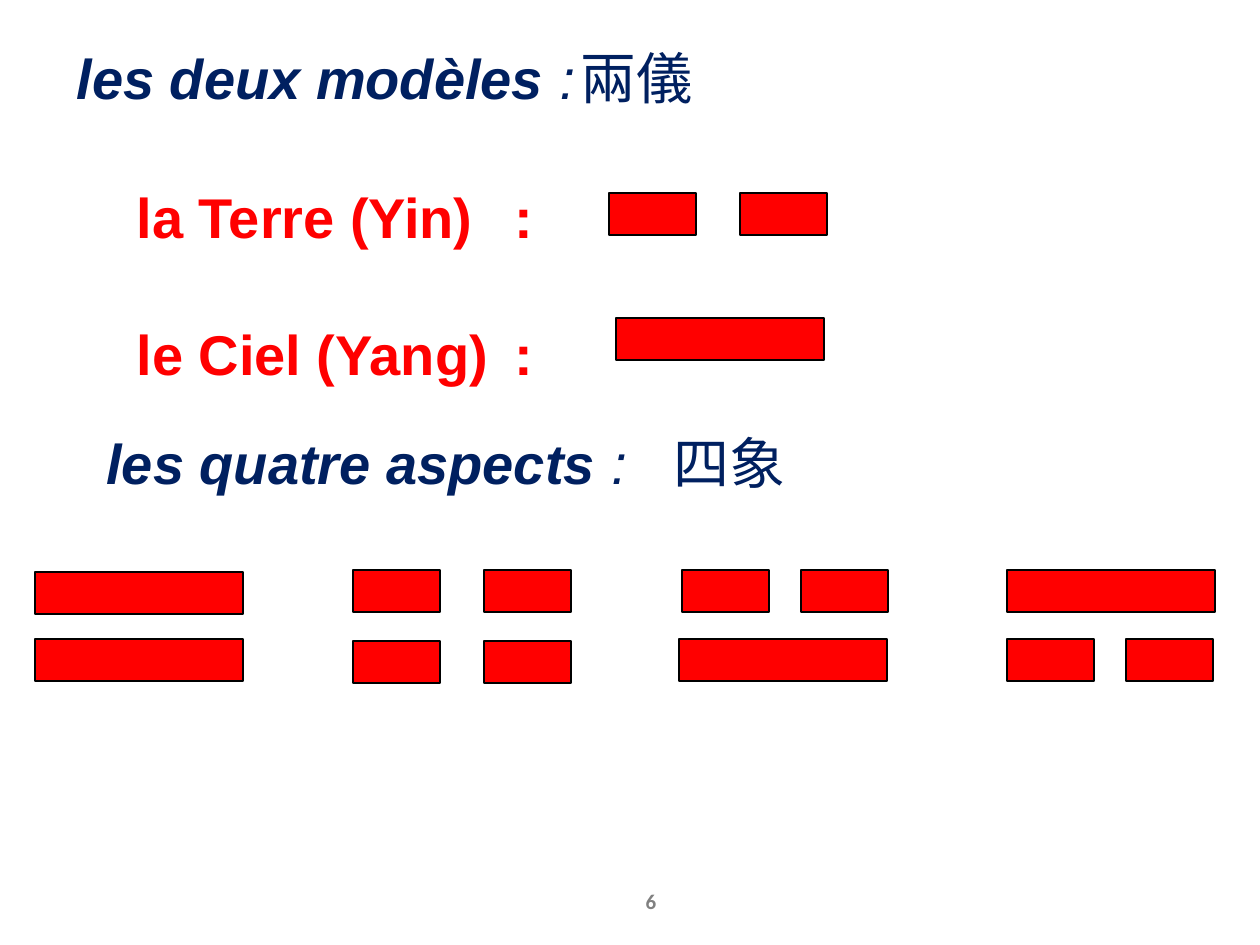
import pptx
import pptx.dml.color
import pptx.enum.shapes
import pptx.enum.text
import pptx.oxml.ns
import pptx.util
from lxml import etree

ALIGN = pptx.enum.text.PP_ALIGN
ANCHOR = pptx.enum.text.MSO_ANCHOR
SCALE = 914400 / 126  # EMU in one px

THEME = {
    "navy": "002060", "red": "FF0000", "black": "000000", "grey": "808080",
    "font": "Arial", "small_font": "Calibri", "size": 32, "small": 12, "line": 1.5,
}

# Content: each paragraph is a list of (text, bold, italic) runs
MODELS = [[("les deux modèles ", True, True), (":", False, True), ("\t兩儀", False, False)]]
ASPECTS = [[("les quatre aspects ", True, True), (":", False, True), ("\t四象", False, False)]]
PAIR = [[("la Terre (Yin)\t:", True, False)], [("le Ciel (Yang)\t:", True, False)]]
NUMBER = [[("6", True, False)]]

# Figures: rows of (left, top, step); step 0 is a whole bar, else a broken one
FIGURES = [
    [(609, 193, 131), (616, 318, 0)],
    [(35, 572, 0), (35, 639, 0)],
    [(353, 570, 131), (353, 641, 131)],
    [(682, 570, 119), (679, 639, 0)],
    [(1007, 570, 0), (1007, 639, 119)],
]
LONG, SHORT, HIGH = 208, 87, 42


def px(*values):
    return [pptx.util.Emu(round(v * SCALE)) for v in values]


def color(name):
    return pptx.dml.color.RGBColor.from_string(THEME[name])


def write(shape, text, box, ink="navy", font="font", size="size",
          align=ALIGN.LEFT, anchor=ANCHOR.TOP, gap=0, tab=None):
    shape.left, shape.top, shape.width, shape.height = px(*box)
    frame = shape.text_frame
    frame.word_wrap = True
    frame.auto_size = pptx.enum.text.MSO_AUTO_SIZE.NONE
    frame.vertical_anchor = anchor
    for i, runs in enumerate(text):
        para = frame.add_paragraph() if i else frame.paragraphs[0]
        para.alignment = align
        para.space_before = pptx.util.Pt(gap if i else 0)
        props = para._p.get_or_add_pPr()
        props.set("marL", "0")
        props.set("indent", "0")
        etree.SubElement(props, pptx.oxml.ns.qn("a:buNone"))
        if tab:
            tabs = etree.SubElement(props, pptx.oxml.ns.qn("a:tabLst"))
            etree.SubElement(tabs, pptx.oxml.ns.qn("a:tab"), pos=str(px(tab)[0]), algn="l")
        for words, bold, slant in runs:
            run = para.add_run()
            run.text = words
            run.font.name = THEME[font]
            run.font.size = pptx.util.Pt(THEME[size])
            run.font.bold, run.font.italic = bold, slant
            run.font.color.rgb = color(ink)


def draw_bar(group, left, top, width):
    bar = group.shapes.add_shape(
        pptx.enum.shapes.MSO_SHAPE.RECTANGLE, *px(left, top, width, HIGH))
    bar.shadow.inherit = False
    bar.fill.solid()
    bar.fill.fore_color.rgb = color("red")
    bar.line.color.rgb = color("black")
    bar.line.width = pptx.util.Pt(THEME["line"])


def main():
    deck = pptx.Presentation()
    deck.slide_width, deck.slide_height = px(1260, 945)
    slide = deck.slides.add_slide(deck.slide_layouts[1])

    # Headings, list and page number
    title, body = slide.placeholders
    write(title, MODELS, (64, 37, 764, 81), tab=541)
    write(body, PAIR, (124, 176, 460, 220), ink="red", gap=40, tab=367)
    write(slide.shapes.add_textbox(0, 0, 0, 0), ASPECTS, (94, 422, 840, 81), tab=562)
    write(slide.shapes.add_textbox(0, 0, 0, 0), NUMBER, (609, 876, 84, 50),
          ink="grey", font="small_font", size="small",
          align=ALIGN.CENTER, anchor=ANCHOR.MIDDLE)

    # Whole and broken bars
    for rows in FIGURES:
        group = slide.shapes.add_group_shape()
        for left, top, step in rows:
            if step:
                draw_bar(group, left, top, SHORT)
                draw_bar(group, left + step, top, SHORT)
            else:
                draw_bar(group, left, top, LONG)

    deck.save("out.pptx")


if __name__ == "__main__":
    main()
